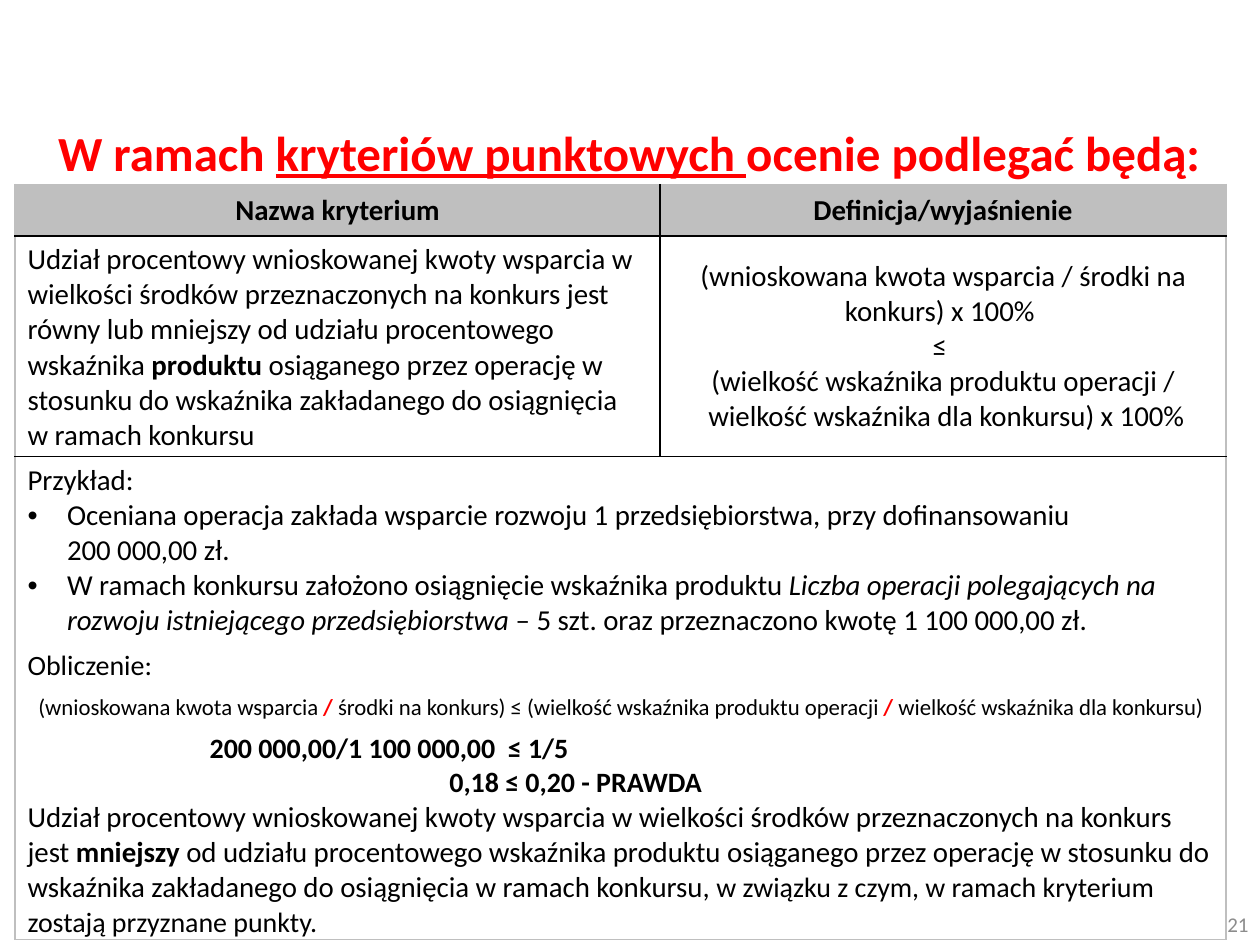
from pptx import Presentation
from pptx.dml.color import RGBColor
from pptx.enum.text import MSO_ANCHOR, MSO_AUTO_SIZE, PP_ALIGN
from pptx.oxml import parse_xml
from pptx.oxml.ns import nsdecls
from pptx.util import Pt

BLACK, RED, GREY, SILVER = "000000", "FF0000", "8C8C8C", "BFBFBF"
CENTER = PP_ALIGN.CENTER

TITLE = [
    {"runs": [("W ramach ", "br"), ("kryteriów punktowych ", "bur"),
              ("ocenie podlegać będą:", "br")], "size": 28},
]
PAGE_NUMBER = [{"runs": [("21", "g")], "size": 12, "align": PP_ALIGN.RIGHT}]

HEADERS = ["Nazwa kryterium", "Definicja/wyjaśnienie"]
CRITERION = [
    {"runs": [
        ("Udział procentowy wnioskowanej kwoty wsparcia w wielkości środków przeznaczonych "
         "na konkurs jest równy lub mniejszy od udziału procentowego wskaźnika ", ""),
        ("produktu", "b"),
        (" osiąganego przez operację w stosunku do wskaźnika zakładanego do osiągnięcia \n"
         "w ramach konkursu", "")]},
]
DEFINITION = [
    {"runs": [("(wnioskowana kwota wsparcia / środki na konkurs) x 100% \n≤ \n"
               " (wielkość wskaźnika produktu operacji / \n"
               " wielkość wskaźnika dla konkursu) x 100%", "")], "align": CENTER},
]
EXAMPLE = [
    {"runs": [("Przykład:", "")]},
    {"runs": [("Oceniana operacja zakłada wsparcie rozwoju 1 przedsiębiorstwa, "
               "przy dofinansowaniu \n200 000,00 zł.", "")], "bullet": True},
    {"runs": [("W ramach konkursu założono osiągnięcie wskaźnika produktu ", ""),
              ("Liczba operacji polegających na rozwoju istniejącego przedsiębiorstwa", "i"),
              (" – 5 szt. oraz przeznaczono kwotę 1 100 000,00 zł.", "")], "bullet": True},
    {"runs": [("Obliczenie:", "")], "size": 16, "before": 6},
    {"runs": [("(wnioskowana kwota wsparcia ", ""), ("/ ", "br"),
              ("środki na konkurs) ≤ (wielkość wskaźnika produktu operacji ", ""),
              ("/", "br"), (" wielkość wskaźnika dla konkursu)", "")],
     "size": 13, "before": 6, "align": CENTER},
    {"runs": [("200 000,00/1 100 000,00  ≤ 1/5", "b")], "size": 16, "before": 6, "indent": 104},
    {"runs": [("0,18 ≤ 0,20 - PRAWDA", "b")], "size": 16, "indent": 241},
    {"runs": [
        ("Udział procentowy wnioskowanej kwoty wsparcia w wielkości środków przeznaczonych "
         "na konkurs jest ", ""),
        ("mniejszy", "b"),
        (" od udziału procentowego wskaźnika produktu osiąganego przez operację w stosunku "
         "do wskaźnika zakładanego do osiągnięcia w ramach konkursu, ", ""),
        ("w związku z czym, w ramach kryterium zostają przyznane punkty.", "", 16)]},
]

COLUMN_WIDTHS = [368.6, 323.4]
ROW_HEIGHTS = [29.5, 126, 276]


def color(value):
    return RGBColor.from_string(value)


def add_run(paragraph, text, style, size):
    run = paragraph.add_run()
    run.text = text
    font = run.font
    font.name, font.size = "Calibri", Pt(size)
    font.bold, font.italic, font.underline = "b" in style, "i" in style, "u" in style
    font.color.rgb = color(RED if "r" in style else GREY if "g" in style else BLACK)


def set_indent(paragraph, left, first=0):
    properties = paragraph._p.get_or_add_pPr()
    properties.set("marL", str(Pt(left)))
    properties.set("indent", str(Pt(first)))
    return properties


def write(text_frame, content):
    for index, item in enumerate(content):
        paragraph = text_frame.add_paragraph() if index else text_frame.paragraphs[0]
        paragraph.alignment = item.get("align", PP_ALIGN.LEFT)
        paragraph.space_before = Pt(item.get("before", 0))
        if item.get("bullet"):
            properties = set_indent(paragraph, 22.5, -22.5)
            for bullet in ('buFont %s typeface="Arial"', 'buChar %s char="•"'):
                properties.append(parse_xml(f"<a:{bullet % nsdecls('a')}/>"))
        elif "indent" in item:
            set_indent(paragraph, item["indent"])
        for text, style, *own_size in item["runs"]:
            size = own_size[0] if own_size else item.get("size", 16.5)
            for number, line in enumerate(text.split("\n")):
                if number:
                    paragraph.add_line_break()
                add_run(paragraph, line, style, size)


def set_borders(cell, row, column):
    sides = {
        "lnL": BLACK if column else SILVER,
        "lnR": SILVER if column else BLACK,
        "lnT": BLACK if row else SILVER,
        "lnB": SILVER if row == len(ROW_HEIGHTS) - 1 else BLACK,
    }
    if row == len(ROW_HEIGHTS) - 1:
        sides["lnL"] = sides["lnR"] = SILVER
    properties = cell._tc.get_or_add_tcPr()
    for side, value in sides.items():
        properties.append(parse_xml(
            f'<a:{side} {nsdecls("a")} w="{Pt(1)}"><a:solidFill>'
            f'<a:srgbClr val="{value}"/></a:solidFill></a:{side}>'))


def add_criteria_table(slide):
    shape = slide.shapes.add_table(len(ROW_HEIGHTS), len(COLUMN_WIDTHS), Pt(8.6), Pt(105.5),
                                   Pt(sum(COLUMN_WIDTHS)), Pt(sum(ROW_HEIGHTS)))
    table = shape.table
    for column, width in zip(table.columns, COLUMN_WIDTHS):
        column.width = Pt(width)
    for row, height in zip(table.rows, ROW_HEIGHTS):
        row.height = Pt(height)
    for row in range(len(ROW_HEIGHTS)):
        for column in range(len(COLUMN_WIDTHS)):
            cell = table.cell(row, column)
            set_borders(cell, row, column)
            if row == 0:
                cell.fill.solid()
                cell.fill.fore_color.rgb = color(SILVER)
            else:
                cell.fill.background()
    table.cell(2, 0).merge(table.cell(2, 1))
    for column, header in enumerate(HEADERS):
        cell = table.cell(0, column)
        cell.vertical_anchor = MSO_ANCHOR.MIDDLE
        write(cell.text_frame, [{"runs": [(header, "b")], "align": CENTER}])
    write(table.cell(1, 0).text_frame, CRITERION)
    table.cell(1, 1).vertical_anchor = MSO_ANCHOR.MIDDLE
    write(table.cell(1, 1).text_frame, DEFINITION)
    write(table.cell(2, 0).text_frame, EXAMPLE)


def main():
    presentation = Presentation()
    presentation.slide_width, presentation.slide_height = Pt(720), Pt(540)
    slide = presentation.slides.add_slide(presentation.slide_layouts[5])

    page_number = slide.shapes.add_textbox(Pt(553), Pt(513.4), Pt(167.5), Pt(28.8))
    page_number.text_frame.word_wrap = True
    page_number.text_frame.vertical_anchor = MSO_ANCHOR.MIDDLE
    write(page_number.text_frame, PAGE_NUMBER)

    title = slide.shapes.title
    title.left, title.top, title.width, title.height = Pt(26), Pt(66.2), Pt(669), Pt(41)
    title.text_frame.word_wrap = False
    title.text_frame.auto_size = MSO_AUTO_SIZE.NONE
    title.text_frame.vertical_anchor = MSO_ANCHOR.TOP
    write(title.text_frame, TITLE)

    add_criteria_table(slide)
    presentation.save("out.pptx")


if __name__ == "__main__":
    main()
